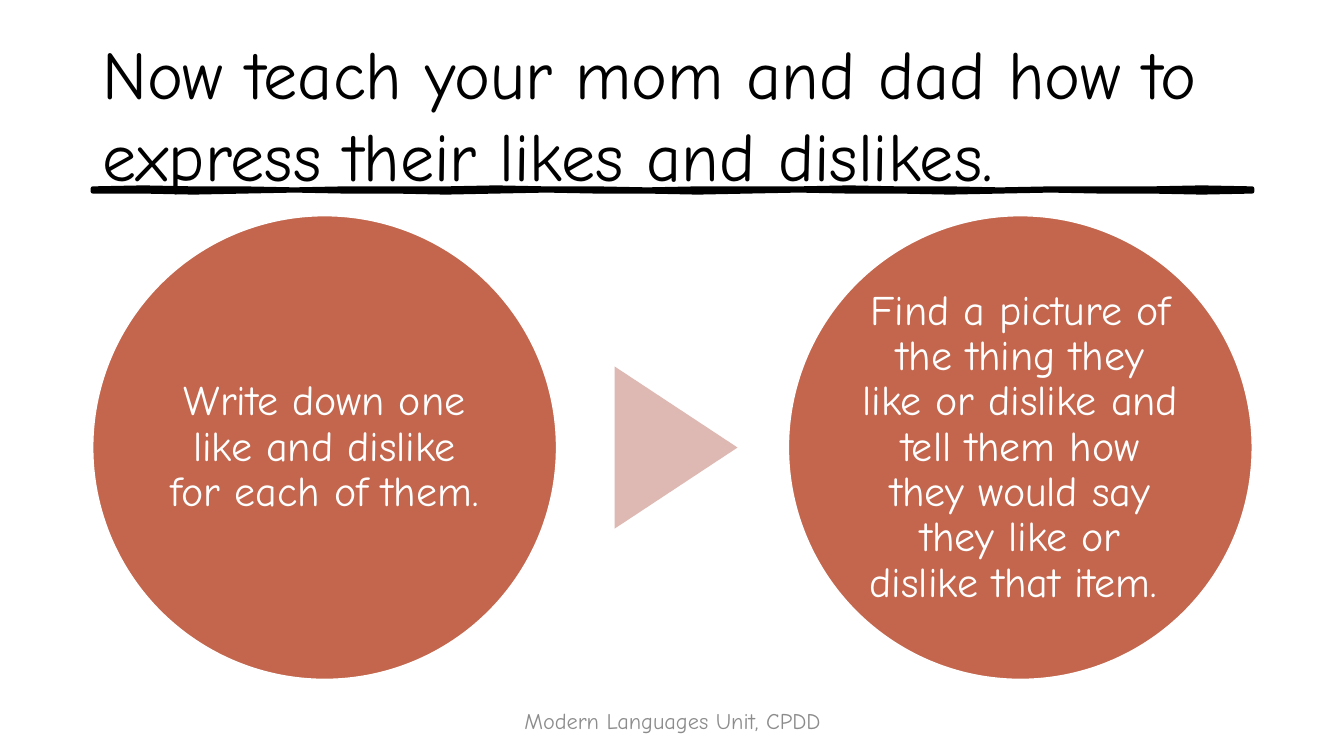
import itertools

import pptx
import pptx.dml.color
import pptx.enum.shapes
import pptx.enum.text
import pptx.util

PX = 9144  # EMU per px, 100 px to the inch
SHAPE = pptx.enum.shapes.MSO_SHAPE
ALIGN = pptx.enum.text.PP_ALIGN


def color(value):
    return pptx.dml.color.RGBColor.from_string(value)


def write(sp, text, size, ink, align, inset=(10, 5), spacing=1.0):
    """Set one vertically centred paragraph in a shape or text box."""
    tf = sp.text_frame
    side, end = (n * PX for n in inset)
    frame = {"word_wrap": True, "vertical_anchor": pptx.enum.text.MSO_ANCHOR.MIDDLE,
             "margin_left": side, "margin_right": side,
             "margin_top": end, "margin_bottom": end}
    for name, value in frame.items():
        setattr(tf, name, value)
    p = tf.paragraphs[0]
    p.alignment, p.line_spacing = align, spacing
    r = p.add_run()
    r.text = text
    for name, value in {"name": "Comic Neue", "size": pptx.util.Pt(size)}.items():
        setattr(r.font, name, value)
    r.font.color.rgb = color(ink)


prs = pptx.Presentation()
prs.slide_width, prs.slide_height = 1333 * PX, 750 * PX
s = prs.slides.add_slide(prs.slide_layouts[6])
shapes = s.shapes

# Hand-drawn rule under the title: two wobbling edges
xs = range(92, 1243, 50)
top = [(x, 187 + dy) for x, dy in zip(xs, itertools.cycle([0, -1, 0, 0, 1, 0, 0]))]
bottom = [(x, 190 + dy) for x, dy in zip(xs, itertools.cycle([0, 0, 1, 0, -1]))]
outline = top + bottom[::-1]
builder = shapes.build_freeform(*outline[0], scale=PX)
builder.add_line_segments(outline[1:], close=True)
rule = builder.convert_to_shape()
rule.shadow.inherit = False
rule.fill.solid()
rule.fill.fore_color.rgb = color("000000")
rule.line.color.rgb = color("000000")
rule.line.width = pptx.util.Pt(3)

title = shapes.add_textbox(92 * PX, 40 * PX, 1150 * PX, 145 * PX)
write(title, "Now teach your mom and dad how to express their likes and dislikes.",
      48.6, "000000", ALIGN.LEFT)

steps = [
    (92, "Write down one like and dislike for each of them. "),
    (782, "Find a picture of the thing they like or dislike and tell them how "
          "they would say they like or dislike that item. "),
]
for left, text in steps:
    circle = shapes.add_shape(SHAPE.OVAL, left * PX, 214 * PX, 460 * PX, 460 * PX)
    circle.shadow.inherit = False
    circle.fill.solid()
    circle.fill.fore_color.rgb = color("C3664D")
    circle.line.color.rgb = color("FFFFFF")
    circle.line.width = pptx.util.Pt(1)
    write(circle, text, 30, "FFFFFF", ALIGN.CENTER, inset=(4, 4), spacing=0.9)

arrow = shapes.add_shape(SHAPE.ISOSCELES_TRIANGLE, 590 * PX, 383 * PX, 161 * PX, 122 * PX)
arrow.rotation = 90
arrow.shadow.inherit = False
arrow.fill.solid()
arrow.fill.fore_color.rgb = color("DEB8B2")
arrow.line.fill.background()

footer = shapes.add_textbox(442 * PX, 695 * PX, 450 * PX, 40 * PX)
write(footer, "Modern Languages Unit, CPDD", 16, "8C8C8C", ALIGN.CENTER)

prs.save("out.pptx")
